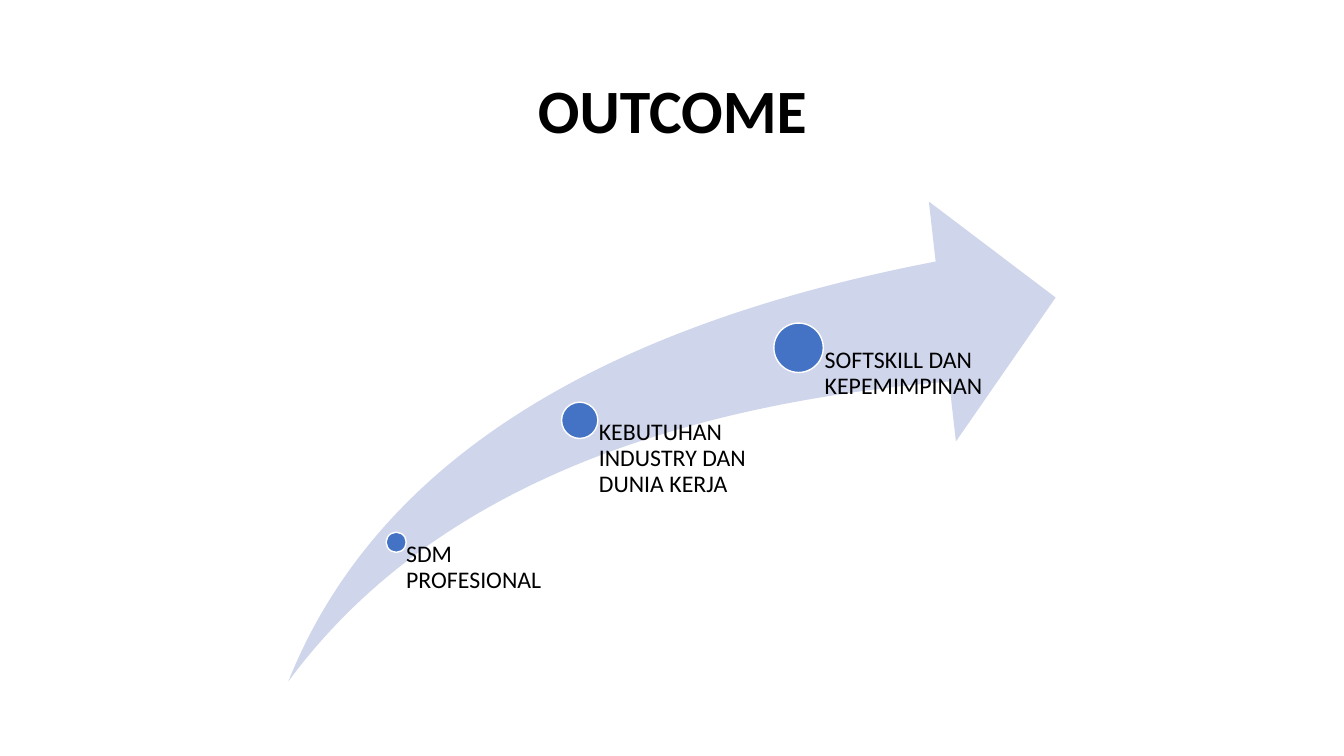
from pptx import Presentation
from pptx.dml.color import RGBColor
from pptx.enum.shapes import MSO_SHAPE
from pptx.enum.text import MSO_ANCHOR, PP_ALIGN
from pptx.util import Inches, Pt

SWOOSH = MSO_SHAPE.SWOOSH_ARROW
OVAL = MSO_SHAPE.OVAL
TOP = MSO_ANCHOR.TOP
MIDDLE = MSO_ANCHOR.MIDDLE
LEFT = PP_ALIGN.LEFT
CENTER = PP_ALIGN.CENTER

COLORS = {"text": "000000", "arrow": "CFD5EA", "dot": "4472C4", "outline": "FFFFFF"}
FONT = "Calibri"
ARROW_BOTTOM = 6.76

MILESTONES = [
    ("SDM PROFESIONAL", 3.93, 5.38, 0.2, 1.77, 0.1),
    ("KEBUTUHAN INDUSTRY DAN DUNIA KERJA", 5.75, 4.17, 0.36, 1.83, 0.19),
    ("SOFTSKILL DAN KEPEMIMPINAN", 7.92, 3.45, 0.49, 1.83, 0.26),
]


def color(name):
    return RGBColor.from_string(COLORS[name])


def add_text(page, text, left, top, width, height, size,
             insets=(0, 0, 0, 0), bold=False, align=LEFT, anchor=TOP):
    box = page.shapes.add_textbox(Inches(left), Inches(top), Inches(width), Inches(height))
    frame = box.text_frame
    frame.word_wrap = True
    frame.vertical_anchor = anchor
    (frame.margin_left, frame.margin_top,
     frame.margin_right, frame.margin_bottom) = map(Inches, insets)
    para = frame.paragraphs[0]
    para.text = text
    para.alignment = align
    para.line_spacing = 0.9
    para.font.name = FONT
    para.font.size = Pt(size)
    para.font.bold = bold
    para.font.color.rgb = color("text")


def add_filled(page, preset, left, top, width, height, fill):
    shape = page.shapes.add_shape(
        preset, Inches(left), Inches(top), Inches(width), Inches(height))
    shape.shadow.inherit = False
    shape.fill.solid()
    shape.fill.fore_color.rgb = color(fill)
    shape.line.fill.background()
    return shape


def add_arrow(page):
    arrow = add_filled(page, SWOOSH, 2.86, 2, 7.61, ARROW_BOTTOM - 2, "arrow")
    arrow.adjustments[0] = 0.25
    arrow.adjustments[1] = 0.25


def add_milestone(page, label, center_x, center_y, diameter, width, inset):
    radius = diameter / 2
    dot = add_filled(page, OVAL, center_x - radius, center_y - radius,
                     diameter, diameter, "dot")
    dot.line.color.rgb = color("outline")
    dot.line.width = Pt(1)
    add_text(page, label, center_x, center_y, width, ARROW_BOTTOM - center_y, 17,
             insets=(inset, 0, 0, 0))


def main():
    deck = Presentation()
    deck.slide_width = Inches(13.33)
    deck.slide_height = Inches(7.5)
    page = deck.slides.add_slide(deck.slide_layouts[6])
    add_text(page, "OUTCOME", 0.92, 0.4, 11.5, 1.45, 44,
             insets=(0.1, 0.05, 0.1, 0.05), bold=True, align=CENTER, anchor=MIDDLE)
    add_arrow(page)
    for milestone in MILESTONES:
        add_milestone(page, *milestone)
    deck.save("out.pptx")


if __name__ == "__main__":
    main()
